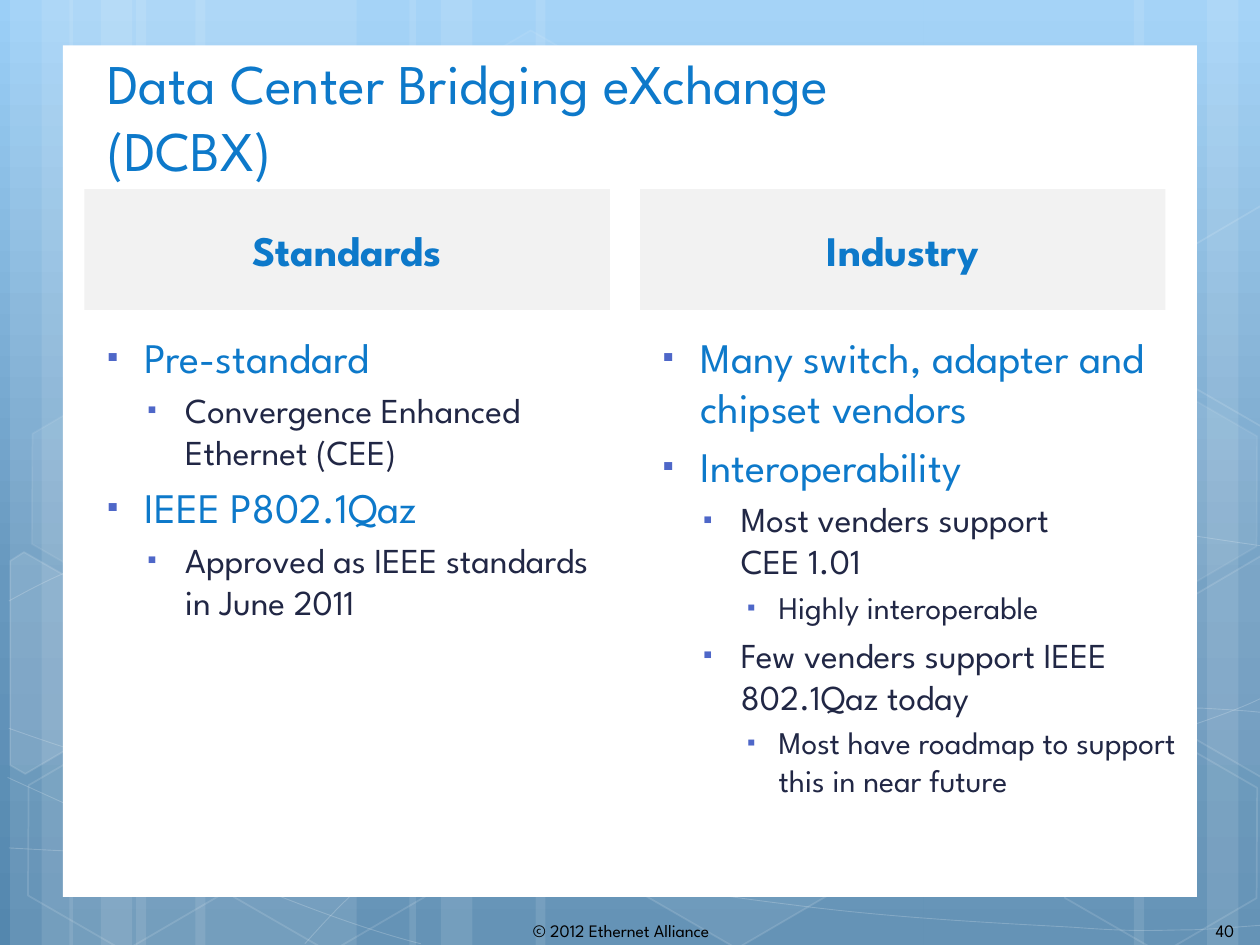
import math
from copy import deepcopy

from lxml import etree
from pptx import Presentation
from pptx import util as u
from pptx.dml.color import RGBColor
from pptx.enum import shapes, text
from pptx.oxml.ns import qn

FONT = "League Spartan"
BLUE, NAVY, WHITE = "0D79CA", "212745", "FFFFFF"
LEVELS = [(24, BLUE, 0.38, -0.3), (20, NAVY, 0.7, -0.3), (18, NAVY, 1, -0.25)]

STRIPES = [(1.08, 1.75), (0.08, 0.5), (0.33, 0.83), (1.55, 1.75), (0.55, 0.5), (0.8, 0.83),
           (7.33, 1.75), (9.58, 0.5), (9, 0.83), (4.25, 3.08), (3.25, 0.5), (3.5, 0.83)]
CURVES = [
    [(0.07, 6.73), (0.61, 6.76), (1.15, 6.79), (1.9, 6.78), (2.65, 6.77), (3.58, 6.75),
     (4.58, 6.65), (5.58, 6.55), (7, 6.36), (7.92, 6.17), (8.83, 5.98), (9.77, 5.68), (10.07, 5.51)],
    [(0.07, 4.77), (0.36, 4.61), (0.65, 4.46), (1.21, 4.31), (1.78, 4.16), (2.59, 3.94),
     (3.47, 3.87), (4.36, 3.8), (5.44, 3.79), (6.54, 3.87), (7.64, 3.95), (9.47, 4.26), (10.07, 4.34)],
    [(0.06, 6.17), (1.27, 6.72), (2.47, 7.27), (3.34, 7.49)],
    [(0.07, 5.78), (0.38, 5.89), (0.7, 6), (1.28, 6.16), (1.86, 6.31), (2.73, 6.56),
     (3.57, 6.73), (4.4, 6.9), (5.45, 7.08), (6.28, 7.18), (7.11, 7.29), (8, 7.33),
     (8.53, 7.36), (9.05, 7.4), (9.19, 7.38), (9.45, 7.38), (9.71, 7.37), (9.89, 7.35), (10.07, 7.34)],
    [(2.42, 7.49), (2.6, 7.29), (2.78, 7.09), (3.02, 6.91), (3.26, 6.73), (3.6, 6.53),
     (3.88, 6.39), (4.16, 6.25), (4.33, 6.19), (4.7, 6.09), (5.06, 5.99), (5.73, 5.85),
     (6.08, 5.78), (6.44, 5.71), (6.49, 5.71), (6.8, 5.69), (7.11, 5.66), (7.6, 5.63),
     (7.94, 5.62), (8.29, 5.61), (8.86, 5.62), (8.86, 5.62), (9.08, 5.62), (9.3, 5.62),
     (9.53, 5.62), (9.71, 5.63), (9.88, 5.64), (9.97, 5.65), (10.06, 5.66), (10.03, 5.65), (10.06, 5.66)],
]
HEXAGONS = [(3.34, 0.36, 4, 8), (4.97, 5.89, 6, 12), (0.11, 5.91, 0, 12), (0.14, 3.12, 7, 8),
            (1.74, 5.92, 0, 12), (7.53, 4.53, 10, 12), (8.34, 5.93, 0, 12), (8.34, 3.14, 7, 8)]
CUT_HEXAGONS = [
    ((0.36, 5.35), [(0.08, 4.45), (0.19, 4.38), (0.96, 4.82), (0.95, 5.7), (0.2, 6.14), (0.08, 6.07)], 10),
    ((9.85, 5.2), [(9.26, 4.85), (10.01, 4.41), (10.09, 4.46), (10.09, 6.13), (10.02, 6.17), (9.26, 5.73)], 4),
    ((9.85, 2.41), [(9.26, 2.07), (10.01, 1.63), (10.1, 1.68), (10.09, 3.35), (10.02, 3.39), (9.26, 2.95)], 0),
]
STANDARDS = [(0, "Pre-standard"), (1, "Convergence Enhanced Ethernet (CEE)"),
             (0, "IEEE P802.1Qaz"), (1, "Approved as IEEE standards in June 2011")]
INDUSTRY = [(0, "Many switch, adapter and chipset vendors"), (0, "Interoperability"),
            (1, "Most venders support \nCEE 1.01"), (2, "Highly interoperable"),
            (1, "Few venders support IEEE 802.1Qaz today"),
            (2, "Most have roadmap to support this in near future")]


def rgb(value):
    """Turn a hex string into a colour."""
    return RGBColor.from_string(value)


def paint(sp, fill=0, line=0, width=1):
    """Give a shape a white fill and line at the given opacities in percent."""
    sp.shadow.inherit = False
    for fmt, tag, alpha in ((sp.fill, "a:solidFill", fill), (sp.line.fill, "a:ln/a:solidFill", line)):
        if not alpha:
            fmt.background()
            continue
        fmt.solid()
        fmt.fore_color.rgb = rgb(WHITE)
        if alpha < 100:
            names = "/".join(qn(t) for t in f"{tag}/a:srgbClr".split("/"))
            clr = sp._element.spPr.find(names)
            etree.SubElement(clr, qn("a:alpha"), val=str(alpha * 1000))
    if line:
        sp.line.width = u.Pt(width)


def place(sp, box):
    """Move a shape to a box given in inches."""
    sp.left, sp.top, sp.width, sp.height = (u.Inches(v) for v in box)


def add_box(s, kind, box):
    """Add a preset shape in a box given in inches."""
    return s.shapes.add_shape(kind, *(u.Inches(v) for v in box))


def add_outline(s, points, close):
    """Add a freeform through points given in inches."""
    start, *rest = [(u.Inches(x), u.Inches(y)) for x, y in points]
    builder = s.shapes.build_freeform(*start)
    builder.add_line_segments(rest, close=close)
    return builder.convert_to_shape()


def add_curve(s, points):
    """Add a chain of cubic curves, three points to each after the first."""
    sp = add_outline(s, points, False)
    lines = list(sp._element.iter(qn("a:lnTo")))
    for i in range(0, len(lines), 3):
        curve = etree.Element(qn("a:cubicBezTo"))
        lines[i].addprevious(curve)
        for line in lines[i:i + 3]:
            curve.append(line[0])
            line.getparent().remove(line)
    return sp


def turn(points, center, degrees):
    """Rotate points about a center."""
    cx, cy = center
    c, d = math.cos(math.radians(degrees)), math.sin(math.radians(degrees))
    return [(cx + (x - cx) * c - (y - cy) * d, cy + (x - cx) * d + (y - cy) * c) for x, y in points]


def add_run(p, words, size, color, bold=False):
    """Add one formatted run to a paragraph."""
    r = p.add_run()
    r.text = words
    r.font.name, r.font.size, r.font.bold = FONT, u.Pt(size), bold
    r.font.color.rgb = rgb(color)


def set_frame(sp, anchor):
    """Prepare the text frame of a placeholder."""
    tf = sp.text_frame
    tf.word_wrap, tf.auto_size, tf.vertical_anchor = True, text.MSO_AUTO_SIZE.NONE, anchor
    return tf


def add_background(s):
    """Fill the slide background with a vertical blue gradient."""
    fill = s.background.fill
    fill.gradient()
    fill.gradient_angle = 270
    stops = s._element.find(".//" + qn("a:gsLst"))
    stops.insert(1, deepcopy(stops[0]))
    for stop, color, pos in zip(fill.gradient_stops, ("9BCFF7", "6798BE", "5487AE"), (0, 0.62, 1)):
        stop.color.rgb = rgb(color)
        stop.position = pos


def add_backdrop(s, panel):
    """Draw stripes, curves and hexagons, then the white panel over them."""
    for x, w in STRIPES:
        paint(add_box(s, shapes.MSO_SHAPE.RECTANGLE, (x, 0, w, 7.5)), 10)
    for points in CURVES:
        paint(add_curve(s, points), 0, 20, 0.5)
    for x, y, fill, line in HEXAGONS:
        sp = add_box(s, shapes.MSO_SHAPE.HEXAGON, (x, y, 1.75, 1.52))
        sp.adjustments[0] = 0.285
        sp.rotation = 30
        paint(sp, fill, line)
    for center, points, fill in CUT_HEXAGONS:
        sp = add_outline(s, turn(points, center, -30), True)
        sp.rotation = 30
        paint(sp, fill, 12)
    paint(add_box(s, shapes.MSO_SHAPE.RECTANGLE, panel), 100)


def add_footer(s, box, words):
    """Add one small footer text."""
    tf = s.shapes.add_textbox(*(u.Inches(v) for v in box)).text_frame
    tf.word_wrap = False
    add_run(tf.paragraphs[0], words, 10, "000000")


def fill_title(sp, box, words):
    """Place and write the slide title."""
    place(sp, box)
    p = set_frame(sp, text.MSO_ANCHOR.MIDDLE).paragraphs[0]
    p.alignment = text.PP_ALIGN.LEFT
    add_run(p, words, 32, BLUE)


def add_bullet(p, indent, hanging):
    """Give a paragraph a small square bullet."""
    pPr = p._p.get_or_add_pPr()
    pPr.set("marL", str(u.Inches(indent)))
    pPr.set("indent", str(u.Inches(hanging)))
    clr = etree.SubElement(pPr, qn("a:buClr"))
    etree.SubElement(clr, qn("a:srgbClr"), val="4E67C8")
    etree.SubElement(pPr, qn("a:buSzPct"), val="76000")
    etree.SubElement(pPr, qn("a:buChar"), char="▪")


def fill_column(head, body, box, heading, items):
    """Place a grey heading and the bullet list below it."""
    x, y, w, h = box
    place(head, (x, y, 4.17, 0.96))
    head.fill.solid()
    head.fill.fore_color.rgb = rgb("F2F2F2")
    p = set_frame(head, text.MSO_ANCHOR.MIDDLE).paragraphs[0]
    p.alignment = text.PP_ALIGN.CENTER
    p.space_before = u.Pt(0)
    add_run(p, heading, 24, BLUE, True)

    place(body, (x, y + 1.08, w, h - 1.08))
    tf = set_frame(body, text.MSO_ANCHOR.TOP)
    for i, (level, words) in enumerate(items):
        p = tf.add_paragraph() if i else tf.paragraphs[0]
        size, color, indent, hanging = LEVELS[level]
        p.level = level
        add_bullet(p, indent, hanging)
        if i == 0:
            p.space_before = u.Pt(0)
        for n, part in enumerate(words.split("\n")):
            if n:
                p.add_line_break()
            add_run(p, part, size, color)


def main():
    """Build and save the slide."""
    prs = Presentation()
    prs.slide_width, prs.slide_height = u.Inches(10), u.Inches(7.5)
    s = prs.slides.add_slide(prs.slide_layouts[4])
    title, *columns = s.placeholders
    add_background(s)
    add_backdrop(s, (0.5, 0.36, 9, 6.76))
    add_footer(s, (9.55, 7.25, 0.37, 0.27), "40")
    add_footer(s, (4.13, 7.25, 1.85, 0.27), "© 2012 Ethernet Alliance")
    for ph in (title, *columns):
        s.shapes._spTree.append(ph._element)
    fill_title(title, (0.75, 0.49, 7, 0.85), "Data Center Bridging eXchange (DCBX)")
    fill_column(*columns[:2], (0.67, 1.5, 4.17, 5.28), "Standards", STANDARDS)
    fill_column(*columns[2:], (5.08, 1.5, 4.42, 5.92), "Industry", INDUSTRY)
    prs.save("out.pptx")


if __name__ == "__main__":
    main()
